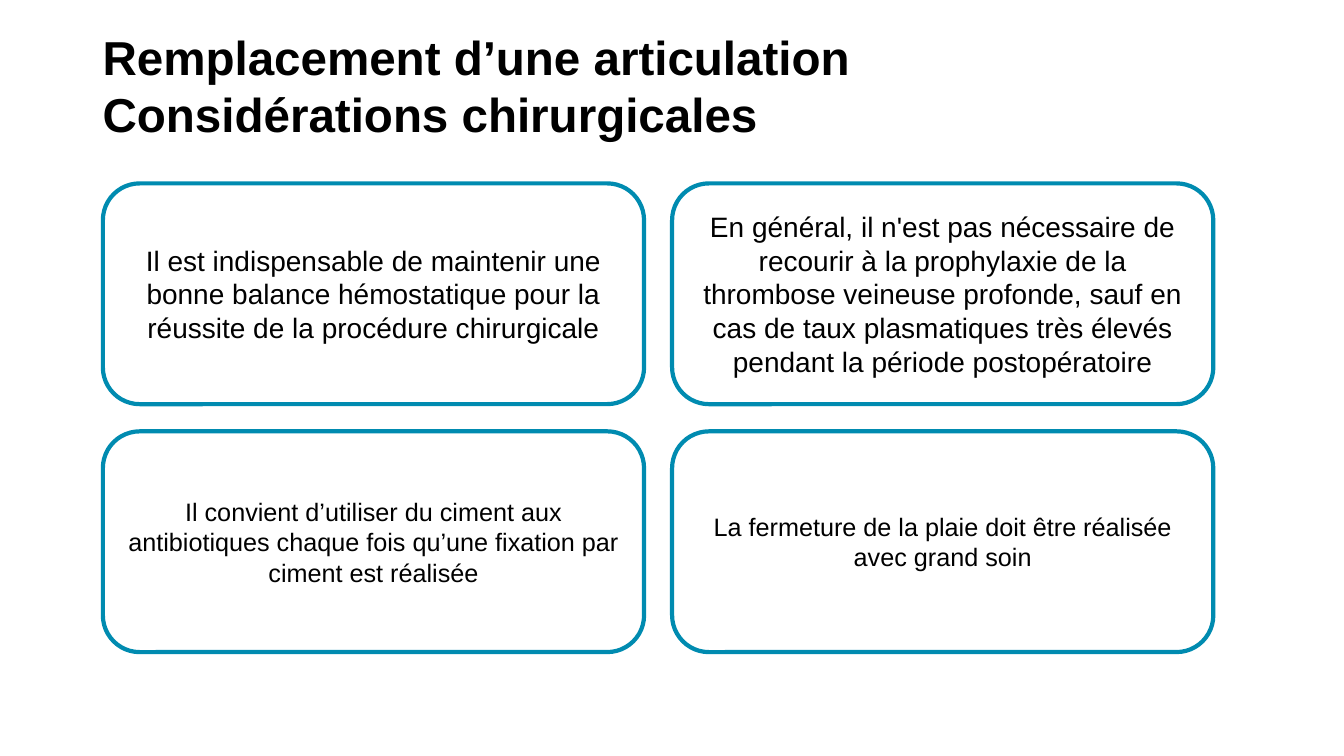
from dataclasses import dataclass

from pptx import Presentation
from pptx.dml.color import RGBColor
from pptx.enum.shapes import MSO_SHAPE
from pptx.enum.text import MSO_ANCHOR, PP_ALIGN
from pptx.util import Pt

ROUND = MSO_SHAPE.ROUNDED_RECTANGLE
MIDDLE = MSO_ANCHOR.MIDDLE
LEFT = PP_ALIGN.LEFT
CENTER = PP_ALIGN.CENTER
FONT = "Arial"
COLORS = {"text": "000000", "fill": "FFFFFF", "edge": "008BB0"}

GRID_X, GRID_Y = 73.5, 131
CARD_W, CARD_H = 386.6, 157.7
STEP_X, STEP_Y = 406.6, 177.1


@dataclass
class Card:
    text: str
    size: int


CARDS = [
    Card("Il est indispensable de maintenir une bonne balance hémostatique "
         "pour la réussite de la procédure chirurgicale", 20),
    Card("En général, il n'est pas nécessaire de recourir à la prophylaxie "
         "de la thrombose veineuse profonde, sauf en cas de taux plasmatiques "
         "très élevés pendant la période postopératoire", 20),
    Card("Il convient d’utiliser du ciment aux antibiotiques chaque fois "
         "qu’une fixation par ciment est réalisée", 18),
    Card("La fermeture de la plaie doit être réalisée avec grand soin", 18),
]


def color(name: str) -> RGBColor:
    return RGBColor.from_string(COLORS[name])


def write(shape, text: str, size: int, align, bold: bool = False) -> None:
    frame = shape.text_frame
    frame.word_wrap = True
    frame.vertical_anchor = MIDDLE
    frame.text = text
    for line in frame.paragraphs:
        line.alignment = align
        for run in line.runs:
            run.font.name = FONT
            run.font.size = Pt(size)
            run.font.bold = bold
            run.font.color.rgb = color("text")


def draw_title(slide) -> None:
    box = slide.shapes.add_textbox(Pt(66.24), Pt(18), Pt(828), Pt(85.7))
    write(box, "Remplacement d’une articulation\vConsidérations chirurgicales",
          34, LEFT, True)


def draw_card(slide, card: Card, index: int) -> None:
    row, col = divmod(index, 2)
    shape = slide.shapes.add_shape(
        ROUND, Pt(GRID_X + col * STEP_X), Pt(GRID_Y + row * STEP_Y),
        Pt(CARD_W), Pt(CARD_H))
    shape.shadow.inherit = False
    shape.fill.solid()
    shape.fill.fore_color.rgb = color("fill")
    shape.line.color.rgb = color("edge")
    shape.line.width = Pt(3)
    frame = shape.text_frame
    frame.margin_left = frame.margin_right = Pt(6.5)
    frame.margin_top = frame.margin_bottom = Pt(6.5)
    write(shape, card.text, card.size, CENTER)


def main() -> None:
    deck = Presentation()
    deck.slide_width, deck.slide_height = Pt(960), Pt(540)
    slide = deck.slides.add_slide(deck.slide_layouts[6])
    draw_title(slide)
    for index, card in enumerate(CARDS):
        draw_card(slide, card, index)
    deck.save("out.pptx")


if __name__ == "__main__":
    main()
